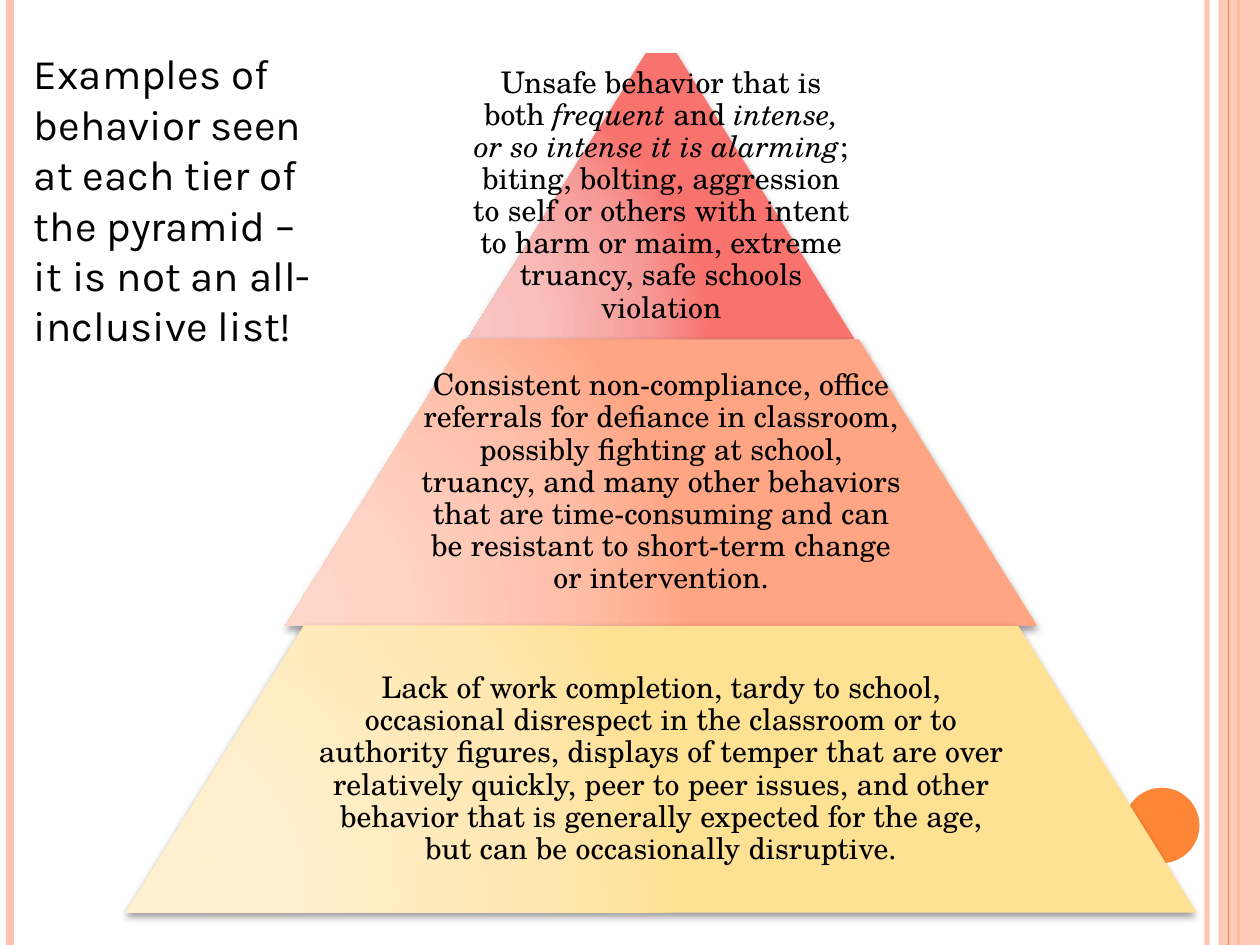
"""Build a slide with a three-tier pyramid of behavior examples."""
import pptx
import pptx.dml.color
import pptx.enum.shapes
import pptx.enum.text
import pptx.oxml
import pptx.oxml.ns
import pptx.util
from lxml import etree

Cm, Pt = pptx.util.Cm, pptx.util.Pt
SHAPE = pptx.enum.shapes.MSO_SHAPE
ALIGN = pptx.enum.text.PP_ALIGN
ANCHOR = pptx.enum.text.MSO_ANCHOR
qn = pptx.oxml.ns.qn

COLORS = {"rail": "FEC3AE", "accent": "FE8637", "text": "000000"}
HEADING_FONT, BODY_FONT = "Karla", "TeX Gyre Schola"
HEADING = ("Examples of behavior seen at each tier of the pyramid – "
           "it is not an all-inclusive list!")
TIERS = [
    {"width": 7.8, "text_width": 7.8,
     "gradient": ["F8C5C3", "F8BFBD", "F69B98", "F8736E"],
     "runs": [("Unsafe behavior that is both ", False),
              ("frequent", True),
              (" and ", False),
              ("intense, or so intense it is alarming", True),
              ("; biting, bolting, aggression to self or others with intent to harm "
               "or maim, extreme truancy, safe schools violation", False)]},
    {"width": 15.16, "text_width": 9.86,
     "gradient": ["FFD6CA", "FFD3C5", "FFBCA5", "FFA584"],
     "runs": [("Consistent non-compliance, office referrals for defiance in classroom, "
               "possibly fighting at school, truancy, and many other behaviors that are "
               "time-consuming and can be resistant to short-term change or "
               "intervention.", False)]},
    {"width": 21.59, "text_width": 14.05,
     "gradient": ["FFF0D1", "FFEFCC", "FFE7B1", "FFE193"],
     "runs": [("Lack of work completion, tardy to school, occasional disrespect in the "
               "classroom or to authority figures, displays of temper that are over "
               "relatively quickly, peer to peer issues, and other behavior that is "
               "generally expected for the age, but can be occasionally disruptive.",
               False)]},
]
GRADIENT_STOPS = [0, 30, 75, 100]
PYRAMID_CENTER, PYRAMID_TOP, TIER_HEIGHT = 13.33, 1.06, 5.78
RAILS = [(24.33, "rail", 3, 93), (0.2, "rail", 4.5, 100), (24.97, "accent", 1.5, 100)]
INNER_RAIL = (24.77, "accent", 0.75, 100)


def rgb(name):
    return pptx.dml.color.RGBColor.from_string(COLORS[name])


def set_alpha(element, percent):
    color = element.find(".//" + qn("a:srgbClr"))
    etree.SubElement(color, qn("a:alpha"), val=str(percent * 1000))


def add_rail(slide, x, color, width, opacity):
    rail = slide.shapes.add_connector(
        pptx.enum.shapes.MSO_CONNECTOR.STRAIGHT, Cm(x), Cm(0), Cm(x), Cm(19.05))
    rail.line.color.rgb = rgb(color)
    rail.line.width = Pt(width)
    properties = rail._element.spPr
    if opacity < 100:
        set_alpha(properties, opacity)
    etree.SubElement(properties, qn("a:effectLst"))


def add_plain(slide, kind, left, top, width, height, color):
    shape = slide.shapes.add_shape(kind, Cm(left), Cm(top), Cm(width), Cm(height))
    shape.shadow.inherit = False
    shape.line.fill.background()
    shape.fill.solid()
    shape.fill.fore_color.rgb = rgb(color)
    return shape


def apply_gradient(shape, colors):
    stops = "".join(
        f'<a:gs pos="{stop * 1000}"><a:srgbClr val="{color}"/></a:gs>'
        for stop, color in zip(GRADIENT_STOPS, colors))
    gradient = pptx.oxml.parse_xml(
        f'<a:gradFill {pptx.oxml.ns.nsdecls("a")} rotWithShape="1">'
        f'<a:gsLst>{stops}</a:gsLst><a:path path="circle">'
        '<a:fillToRect l="5000" t="100000" r="120000" b="10000"/></a:path></a:gradFill>')
    properties = shape._element.spPr
    properties.replace(properties.find(qn("a:solidFill")), gradient)


def apply_shadow(shape):
    effects = shape._element.spPr.find(qn("a:effectLst"))
    shadow = etree.SubElement(
        effects, qn("a:outerShdw"), blurRad=str(Pt(4)), dist=str(Pt(2)),
        dir="5400000", rotWithShape="0")
    etree.SubElement(shadow, qn("a:srgbClr"), val=COLORS["text"])
    set_alpha(effects, 40)


def add_run(paragraph, text, font, size, italic=False):
    run = paragraph.add_run()
    run.text = text
    run.font.name, run.font.size, run.font.italic = font, Pt(size), italic
    run.font.color.rgb = rgb("text")


def add_tier(slide, index, tier):
    top = PYRAMID_TOP + index * TIER_HEIGHT
    level = add_plain(slide, SHAPE.TRAPEZOID, PYRAMID_CENTER - tier["width"] / 2, top,
                      tier["width"], TIER_HEIGHT, "rail")
    level.adjustments[0] = 0.622
    apply_gradient(level, tier["gradient"])
    apply_shadow(level)
    examples = slide.shapes.add_textbox(
        Cm(PYRAMID_CENTER - tier["text_width"] / 2), Cm(top),
        Cm(tier["text_width"]), Cm(TIER_HEIGHT)).text_frame
    examples.word_wrap = True
    examples.vertical_anchor = ANCHOR.MIDDLE
    examples.margin_left = examples.margin_right = Cm(0.05)
    examples.margin_top = examples.margin_bottom = Cm(0.05)
    paragraph = examples.paragraphs[0]
    paragraph.alignment = ALIGN.CENTER
    paragraph.line_spacing = 0.9
    for text, italic in tier["runs"]:
        add_run(paragraph, text, BODY_FONT, 17, italic)


def add_heading(slide):
    heading = slide.shapes.title
    heading.left, heading.top = Cm(0.43), Cm(0.84)
    heading.width, heading.height = Cm(6.15), Cm(7.44)
    frame = heading.text_frame
    frame.word_wrap = True
    frame.auto_size = pptx.enum.text.MSO_AUTO_SIZE.SHAPE_TO_FIT_TEXT
    frame.vertical_anchor = ANCHOR.TOP
    frame.paragraphs[0].alignment = ALIGN.LEFT
    add_run(frame.paragraphs[0], HEADING, HEADING_FONT, 24)


def main():
    deck = pptx.Presentation()
    deck.slide_width, deck.slide_height = Cm(25.4), Cm(19.05)
    slide = deck.slides.add_slide(deck.slide_layouts[5])
    add_heading(slide)
    for rail in RAILS:
        add_rail(slide, *rail)
    band = add_plain(slide, SHAPE.RECTANGLE, 24.56, 0, 0.84, 19.05, "rail")
    set_alpha(band._element.spPr, 87)
    add_rail(slide, *INNER_RAIL)
    add_plain(slide, SHAPE.OVAL, 22.66, 15.88, 1.52, 1.52, "accent")
    for index, tier in enumerate(TIERS):
        add_tier(slide, index, tier)
    deck.save("out.pptx")


if __name__ == "__main__":
    main()
